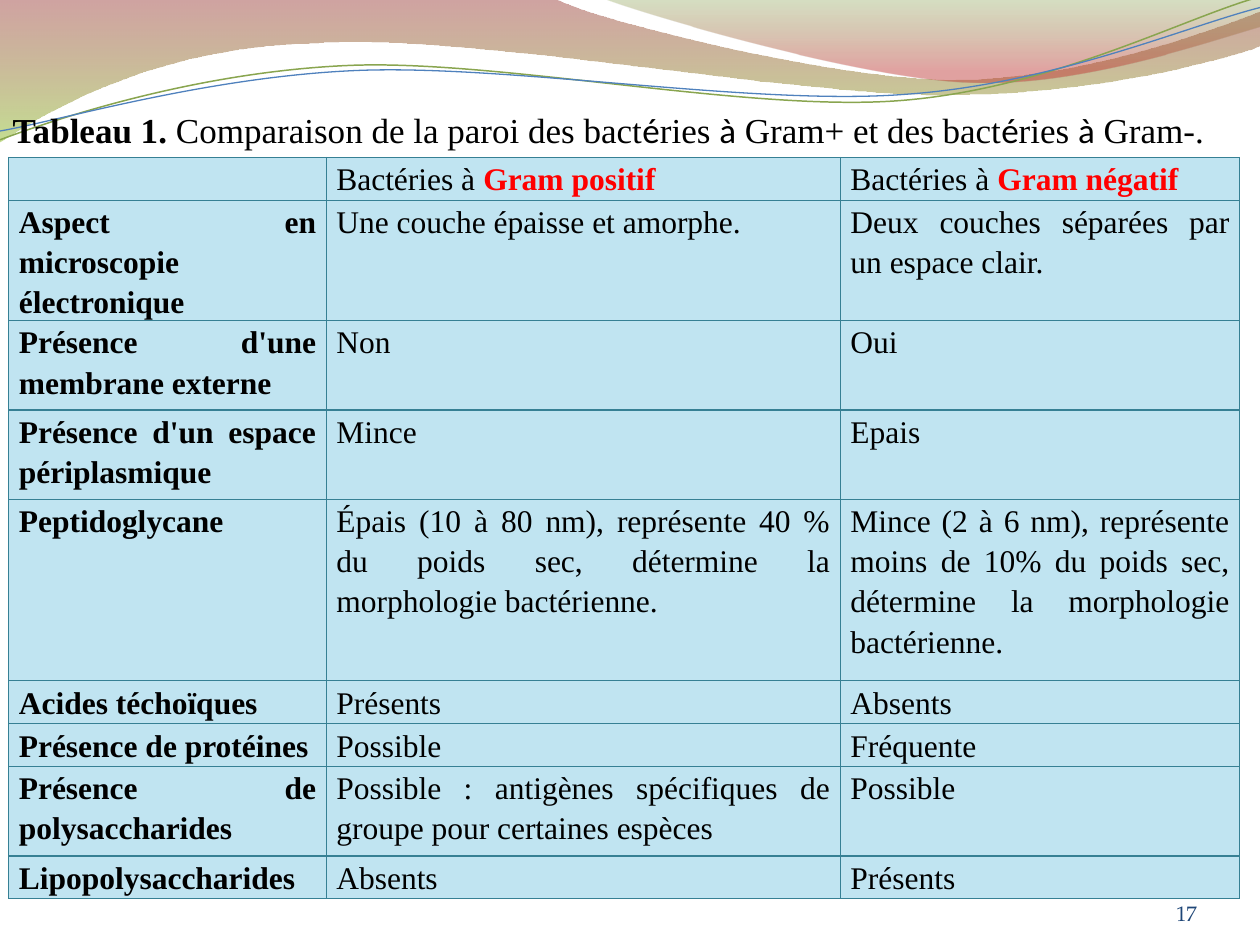
"""Build the slide comparing the cell walls of Gram+ and Gram- bacteria."""
from lxml.etree import SubElement
from pptx import Presentation
from pptx.dml.color import RGBColor
from pptx.enum.text import MSO_ANCHOR as Anchor, MSO_AUTO_SIZE as AutoSize, PP_ALIGN as Align
from pptx.oxml.ns import qn
from pptx.util import Inches, Pt

BLACK = RGBColor(0x00, 0x00, 0x00)
RED = RGBColor(0xFF, 0x00, 0x00)
NAVY = RGBColor(0x1E, 0x46, 0x77)
PALE_BLUE = RGBColor(0xC0, 0xE4, 0xF1)
BRICK = RGBColor(0x97, 0x33, 0x30)
LIME = RGBColor(0x95, 0xC2, 0x38)
MOSS = RGBColor(0x76, 0x95, 0x37)
CRIMSON = RGBColor(0xBE, 0x33, 0x30)
OLIVE = RGBColor(0x89, 0xA5, 0x4F)
BLUE = RGBColor(0x4F, 0x81, 0xBD)
BORDER = RGBColor(0x36, 0x80, 0x94)
SERIF = "Times New Roman"


def add_wave(shapes, start, segments, closed):
    """Draw straight (2 numbers) and cubic Bézier (6 numbers) segments in inches."""
    points = [(Inches(x), Inches(y))
              for segment in segments for x, y in zip(segment[::2], segment[1::2])]
    builder = shapes.build_freeform(Inches(start[0]), Inches(start[1]))
    builder.add_line_segments(points, close=closed)
    wave = builder.convert_to_shape()
    wave.shadow.inherit = False
    steps = iter(list(wave._element.spPr.iter(qn("a:lnTo"))))
    for segment in segments:
        first = next(steps)
        if len(segment) == 6:
            curve = first.makeelement(qn("a:cubicBezTo"))
            first.addprevious(curve)
            for step in (first, next(steps), next(steps)):
                curve.append(step[0])
                step.getparent().remove(step)
    return wave


def add_run(paragraph, text, **font):
    run = paragraph.add_run()
    run.text = text
    if "name" in font:
        run.font.name = font["name"]
    if "bold" in font:
        run.font.bold = font["bold"]
    if "color" in font:
        run.font.color.rgb = font["color"]


prs = Presentation()
prs.slide_width, prs.slide_height = Inches(10), Inches(7.5)
slide = prs.slides.add_slide(prs.slide_layouts[5])
shapes = slide.shapes

bands = [
    ((0, 0), [(4.4, -0.01), (4.76, 0.17, 6.64, 0.63, 7.58, 0.63),
              (8.53, 0.63, 9.58, 0.26, 10, 0.09), (10.01, 0.36),
              (9.83, 0.44, 8.7, 0.76, 7.46, 0.75), (6.22, 0.75, 3.82, 0.28, 2.57, 0.34),
              (1.29, 0.36, 0.46, 0.83, -0.01, 1.13)],
     [(0, BRICK, 45), (1, LIME, 55)]),
    ((4.79, -0.01), [(5.09, 0.11, 6.82, 0.62, 7.69, 0.65),
                     (8.56, 0.69, 9.61, 0.32, 10, 0.21), (10, 0)],
     [(0, MOSS, 30), (0.8, CRIMSON, 45)]),
]
for start, segments, stops in bands:
    band = add_wave(shapes, start, segments, True)
    band.line.fill.background()
    band.fill.gradient()
    band.fill.gradient_angle = 270
    for stop, (position, color, opacity) in zip(band.fill.gradient_stops, stops):
        stop.position = position
        stop.color.rgb = color
    for tint, (position, color, opacity) in zip(band._element.spPr.iter(qn("a:srgbClr")), stops):
        SubElement(tint, qn("a:alpha"), val=str(opacity * 1000))

strands = [
    ((0, 1.11), [(0.48, 0.93, 1.58, 0.57, 2.77, 0.52), (3.95, 0.47, 5.93, 0.89, 7.13, 0.8),
                 (8.33, 0.71, 9.38, 0.15, 9.98, -0.02)], OLIVE, 0.85),
    ((0, 1.04), [(0.47, 0.96, 1.64, 0.61, 2.83, 0.56), (4.03, 0.51, 5.97, 0.84, 7.17, 0.75),
                 (8.36, 0.67, 9.41, 0.21, 10, 0.06)], BLUE, 0.75),
]
for start, segments, color, width in strands:
    strand = add_wave(shapes, start, segments, False)
    strand.fill.background()
    strand.line.color.rgb = color
    strand.line.width = Pt(width)

rows = [
    ("", "Bactéries à |Gram positif", "Bactéries à |Gram négatif"),
    ("Aspect en microscopie électronique", "Une couche épaisse et amorphe.",
     "Deux couches séparées par un espace clair."),
    ("Présence d'une membrane externe", "Non", "Oui"),
    ("Présence d'un espace périplasmique", "Mince", "Epais"),
    ("Peptidoglycane",
     "Épais (10 à 80 nm), représente 40 % du poids sec, détermine la morphologie bactérienne.",
     "Mince (2 à 6 nm), représente moins de 10% du poids sec, "
     "détermine la morphologie bactérienne."),
    ("Acides téchoïques", "Présents", "Absents"),
    ("Présence de protéines", "Possible", "Fréquente"),
    ("Présence de polysaccharides",
     "Possible : antigènes spécifiques de groupe pour certaines espèces", "Possible"),
    ("Lipopolysaccharides", "Absents", "Présents"),
]
row_heights = [0.34, 0.71, 0.71, 0.71, 1.44, 0.34, 0.34, 0.71, 0.34]
column_widths = [2.52, 4.08, 3.17]
comparison = shapes.add_table(len(rows), 3, Inches(0.07), Inches(1.25),
                              Inches(sum(column_widths)), Inches(sum(row_heights))).table
comparison.first_row = comparison.horz_banding = False
for column, width in zip(comparison.columns, column_widths):
    column.width = Inches(width)
for r, (row, height) in enumerate(zip(rows, row_heights)):
    comparison.rows[r].height = Inches(height)
    for c, text in enumerate(row):
        cell = comparison.cell(r, c)
        cell.margin_left = cell.margin_right = Inches(0.08)
        cell.margin_top = cell.margin_bottom = 0
        paragraph = cell.text_frame.paragraphs[0]
        paragraph.alignment = Align.JUSTIFY
        paragraph.line_spacing = 1.15
        paragraph.space_after = Pt(4.5)
        paragraph.font.name, paragraph.font.size = SERIF, Pt(18)
        paragraph.font.bold = c == 0
        paragraph.font.color.rgb = BLACK
        plain, _, gram = text.partition("|")
        if plain:
            add_run(paragraph, plain)
        if gram:
            add_run(paragraph, gram, bold=True, color=RED)
        properties = cell._tc.get_or_add_tcPr()
        for side in ("a:lnL", "a:lnR", "a:lnT", "a:lnB"):
            edge = SubElement(properties, qn(side), w=str(Pt(0.75)))
            SubElement(SubElement(edge, qn("a:solidFill")), qn("a:srgbClr"), val=str(BORDER))
        cell.fill.solid()
        cell.fill.fore_color.rgb = PALE_BLUE

caption = shapes.title
caption.left, caption.top, caption.width, caption.height = (
    Inches(0), Inches(0.81), Inches(9.79), Inches(0.44))
caption_frame = caption.text_frame
caption_frame.word_wrap = False
caption_frame.auto_size = AutoSize.SHAPE_TO_FIT_TEXT
caption_frame.vertical_anchor = Anchor.MIDDLE
sentence = caption_frame.paragraphs[0]
sentence.alignment = Align.LEFT
sentence.font.size = Pt(20)
sentence.font.color.rgb = BLACK
add_run(sentence, "Tableau 1.", name=SERIF, bold=True)
for i, piece in enumerate([" Comparaison de la paroi des bact", "é", "ries ", "à",
                           " Gram+ et des bact", "é", "ries ", "à", " Gram-."]):
    add_run(sentence, piece, name="Calibri" if i % 2 else SERIF)
shapes._spTree.append(caption._element)

page_frame = shapes.add_textbox(Inches(8.67), Inches(6.95), Inches(0.83), Inches(0.4)).text_frame
page_frame.margin_left = page_frame.margin_right = 0
page_frame.margin_top = page_frame.margin_bottom = 0
page_frame.word_wrap = True
page_frame.vertical_anchor = Anchor.BOTTOM
page_number = page_frame.paragraphs[0]
page_number.alignment = Align.RIGHT
page_number.font.name, page_number.font.size = "TeX Gyre Pagella", Pt(12)
page_number.font.color.rgb = NAVY
add_run(page_number, "17")

prs.save("out.pptx")
